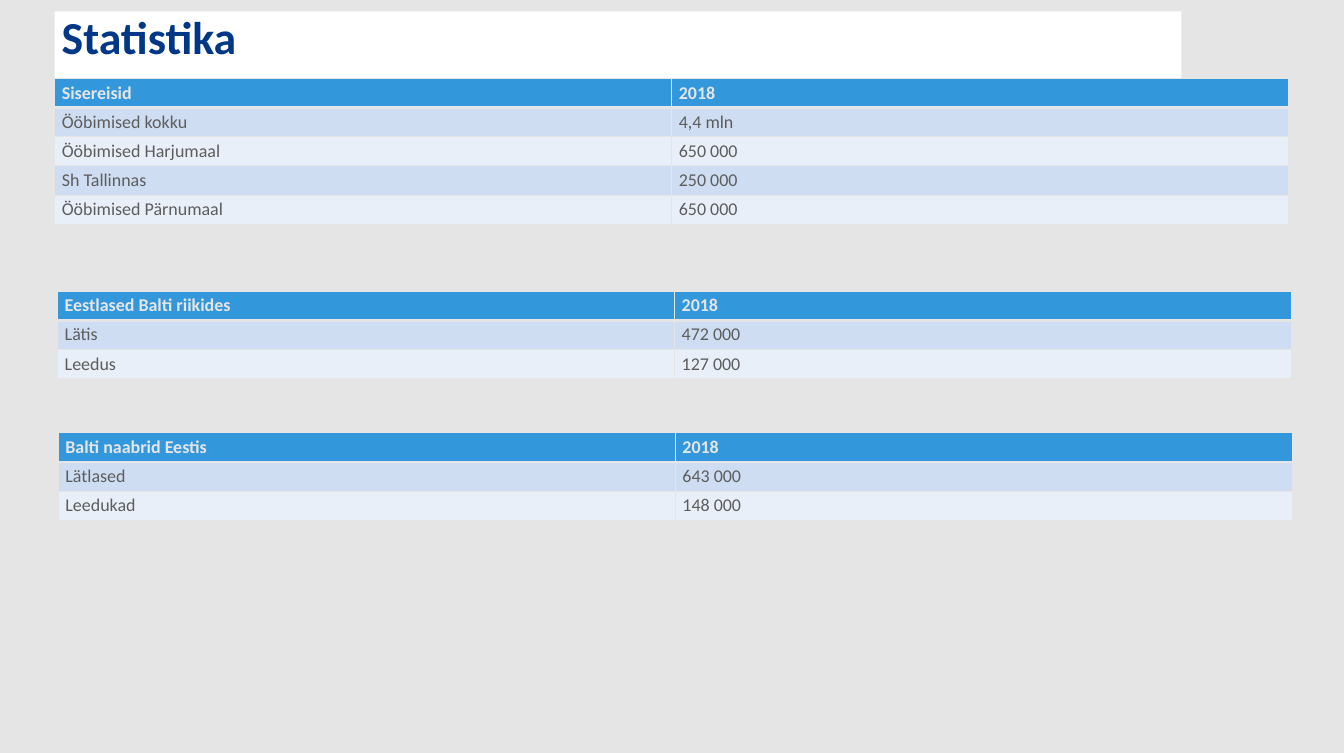
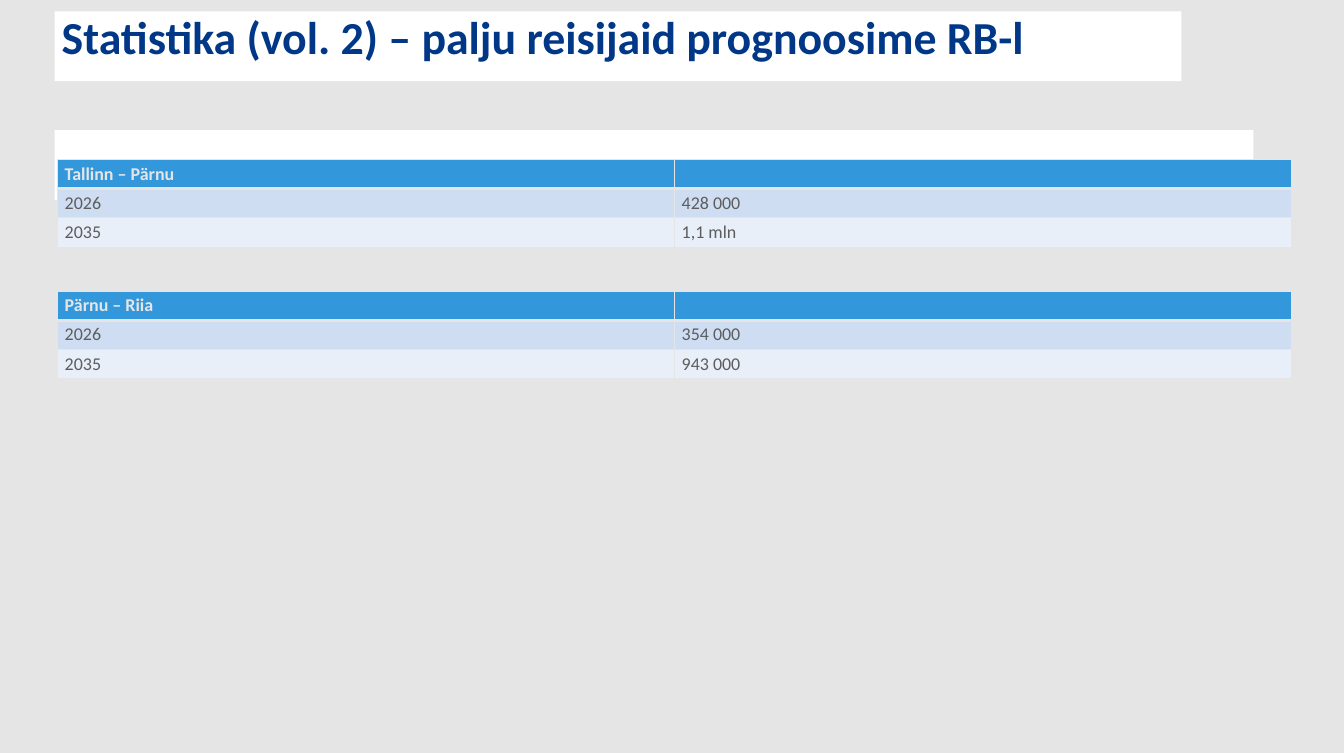
"""Builds two slides of travel statistics tables."""
from lxml import etree
from pptx import Presentation
from pptx.dml.color import RGBColor
from pptx.enum.shapes import MSO_SHAPE
from pptx.enum.text import MSO_ANCHOR, PP_ALIGN
from pptx.oxml.ns import qn
from pptx.util import Inches, Pt

RECTANGLE = MSO_SHAPE.RECTANGLE
TOP = MSO_ANCHOR.TOP
LEFT = PP_ALIGN.LEFT

COLORS = {
    "background": "E5E5E5",
    "panel": "FFFFFF",
    "title": "003787",
    "header": "3398DB",
    "odd_row": "CEDDF1",
    "even_row": "E8EFF8",
    "body": "5D5D5D",
}
FONT = "Calibri"
COLUMN_WIDTH = 8.58
ROW_HEIGHT = 0.4

SLIDES = [
    {
        "title": "Statistika",
        "panels": [],
        "tables": [
            (0.76, 1.09, [
                ("Sisereisid", "2018"),
                ("Ööbimised kokku", "4,4 mln"),
                ("Ööbimised Harjumaal", "650 000"),
                ("Sh Tallinnas", "250 000"),
                ("Ööbimised Pärnumaal", "650 000"),
            ]),
            (0.8, 4.05, [
                ("Eestlased Balti riikides", "2018"),
                ("Lätis", "472 000"),
                ("Leedus", "127 000"),
            ]),
            (0.81, 6.02, [
                ("Balti naabrid Eestis", "2018"),
                ("Lätlased", "643 000"),
                ("Leedukad", "148 000"),
            ]),
        ],
    },
    {
        "title": "Statistika (vol. 2) – palju reisijaid prognoosime RB-l",
        "panels": [(1.81, 16.67)],
        "tables": [
            (0.8, 2.22, [
                ("Tallinn – Pärnu", ""),
                ("2026", "428 000"),
                ("2035", "1,1 mln"),
            ]),
            (0.8, 4.05, [
                ("Pärnu – Riia", ""),
                ("2026", "354 000"),
                ("2035", "943 000"),
            ]),
        ],
    },
]


def write(frame, text, size=18, color="body", bold=False, spacing=1.0):
    paragraph = frame.paragraphs[0]
    paragraph.alignment = LEFT
    paragraph.line_spacing = spacing
    paragraph.font.size = Pt(size)
    if text:
        run = paragraph.add_run()
        run.text = text
        run.font.name = FONT
        run.font.size = Pt(size)
        run.font.bold = bold
        run.font.color.rgb = RGBColor.from_string(COLORS[color])


def add_border(cell, side, width):
    line = etree.SubElement(cell._tc.get_or_add_tcPr(), qn(f"a:ln{side}"), w=str(Pt(width)))
    solid = etree.SubElement(line, qn("a:solidFill"))
    etree.SubElement(solid, qn("a:srgbClr"), val=COLORS["background"])


prs = Presentation()
prs.slide_width = Inches(18.69)
prs.slide_height = Inches(10.476)
backdrop = prs.slide_master.background.fill
backdrop.solid()
backdrop.fore_color.rgb = RGBColor.from_string(COLORS["background"])

for content in SLIDES:
    slide = prs.slides.add_slide(prs.slide_layouts[6])

    bands = []
    for top, width in [(0.16, 15.67)] + content["panels"]:
        band = slide.shapes.add_shape(
            RECTANGLE, Inches(0.76), Inches(top), Inches(width), Inches(0.97))
        band.shadow.inherit = False
        band.fill.solid()
        band.fill.fore_color.rgb = RGBColor.from_string(COLORS["panel"])
        band.line.fill.background()
        bands.append(band)

    title = bands[0].text_frame
    title.word_wrap = True
    title.vertical_anchor = TOP
    write(title, content["title"], size=45.9, color="title", bold=True, spacing=0.9)

    for left, top, rows in content["tables"]:
        table = slide.shapes.add_table(
            len(rows), 2, Inches(left), Inches(top),
            Inches(2 * COLUMN_WIDTH), Inches(ROW_HEIGHT * len(rows))).table
        table.first_row = False
        table.horz_banding = False
        for row_index, row in enumerate(rows):
            table.rows[row_index].height = Inches(ROW_HEIGHT)
            is_header = row_index == 0
            row_fill = "header" if is_header else ("even_row", "odd_row")[row_index % 2]
            widths = {"L": 1, "R": 1, "T": 3 if row_index == 1 else 1, "B": 3 if is_header else 1}
            for column_index, text in enumerate(row):
                cell = table.cell(row_index, column_index)
                for side, width in widths.items():
                    add_border(cell, side, width)
                cell.fill.solid()
                cell.fill.fore_color.rgb = RGBColor.from_string(COLORS[row_fill])
                write(cell.text_frame, text, color="background" if is_header else "body",
                      bold=is_header)

prs.save("out.pptx")
